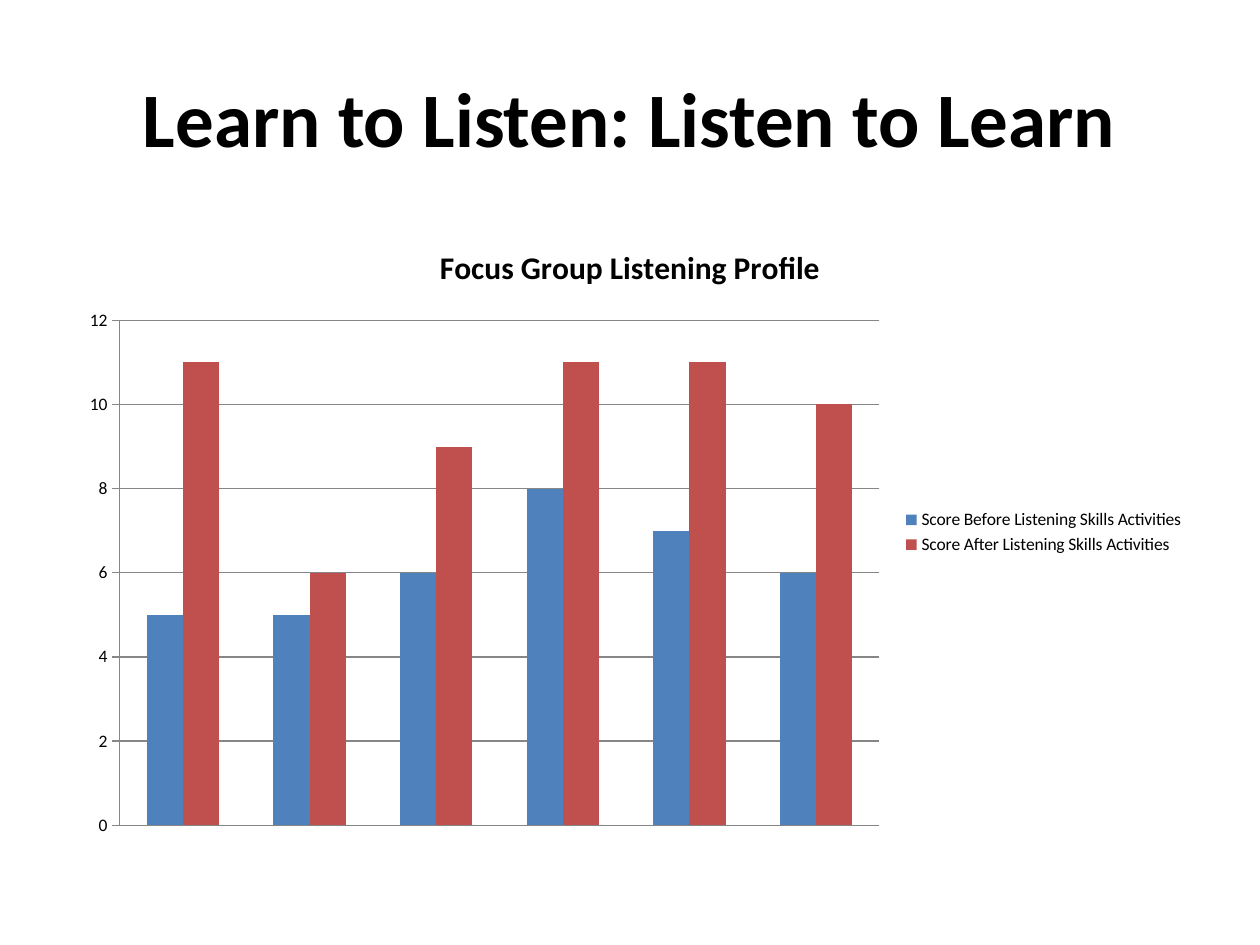
"""Build the slide comparing listening scores before and after the activities."""
from lxml.etree import SubElement
from pptx import Presentation
from pptx.chart.data import CategoryChartData
from pptx.dml.color import RGBColor
from pptx.enum.chart import XL_CHART_TYPE as ChartType, XL_LEGEND_POSITION as LegendPosition
from pptx.enum.chart import XL_TICK_MARK as TickMark
from pptx.enum.text import MSO_ANCHOR as Anchor, PP_ALIGN as Align
from pptx.oxml.ns import qn
from pptx.util import Pt

BLACK = RGBColor(0x00, 0x00, 0x00)
GRAY = RGBColor(0x86, 0x86, 0x86)
BLUE = RGBColor(0x4F, 0x81, 0xBD)
RED = RGBColor(0xC0, 0x50, 0x4D)
FONT = "Calibri"

TITLE = "Learn to Listen: Listen to Learn"
CHART_TITLE = "Focus Group Listening Profile"
CATEGORIES = ["1", "2", "3", "4", "5", "6"]
SERIES = [
    ("Score Before Listening Skills Activities", [5, 5, 6, 8, 7, 6], BLUE),
    ("Score After Listening Skills Activities", [11, 6, 9, 11, 11, 10], RED),
]
TITLE_BOX = (36, 21.6, 648, 90)
CHART_BOX = (36, 126, 648, 356.4)
PLOT_AREA = {"x": 0.05, "y": 0.16, "w": 0.67, "h": 0.81}


def style_font(font, size, bold=False):
    font.name, font.size, font.bold = FONT, Pt(size), bold
    font.color.rgb = BLACK


def add_title(page):
    box = page.shapes.title
    box.left, box.top, box.width, box.height = map(Pt, TITLE_BOX)
    box.text_frame.vertical_anchor = Anchor.MIDDLE
    para = box.text_frame.paragraphs[0]
    para.alignment = Align.CENTER
    span = para.add_run()
    span.text = TITLE
    style_font(span.font, 44, True)


def place_plot(chart):
    plot_area = chart._chartSpace.chart.plotArea
    for old in plot_area.findall(qn("c:layout")):
        plot_area.remove(old)
    layout = SubElement(plot_area, qn("c:layout"))
    plot_area.insert(0, layout)
    manual = SubElement(layout, qn("c:manualLayout"))
    settings = {"layoutTarget": "inner", "xMode": "edge", "yMode": "edge", **PLOT_AREA}
    for name, value in settings.items():
        SubElement(manual, qn(f"c:{name}")).set("val", str(value))


def add_score_chart(page):
    data = CategoryChartData()
    data.categories = CATEGORIES
    for name, values, _ in SERIES:
        data.add_series(name, values)
    frame = page.shapes.add_chart(ChartType.COLUMN_CLUSTERED, *map(Pt, CHART_BOX), data)
    chart = frame.chart
    style_font(chart.font, 10)

    span = chart.chart_title.text_frame.paragraphs[0].add_run()
    span.text = CHART_TITLE
    style_font(span.font, 18, True)
    chart.chart_title.include_in_layout = True

    chart.has_legend = True
    chart.legend.position = LegendPosition.RIGHT
    chart.legend.include_in_layout = False

    chart.category_axis.visible = False
    axis = chart.value_axis
    axis.minimum_scale, axis.maximum_scale, axis.major_unit = 0, 12, 2
    axis.major_tick_mark = TickMark.CROSS
    axis.has_major_gridlines = True
    for line in (axis.format.line, axis.major_gridlines.format.line):
        line.color.rgb = GRAY
        line.width = Pt(0.75)

    plot = chart.plots[0]
    plot.vary_by_categories = False
    plot.gap_width, plot.overlap = 150, 0
    for series, (_, _, color) in zip(plot.series, SERIES):
        series.format.fill.solid()
        series.format.fill.fore_color.rgb = color
    place_plot(chart)


def main():
    deck = Presentation()
    deck.slide_width, deck.slide_height = Pt(720), Pt(540)
    page = deck.slides.add_slide(deck.slide_layouts[5])
    add_title(page)
    add_score_chart(page)
    deck.save("out.pptx")


if __name__ == "__main__":
    main()
